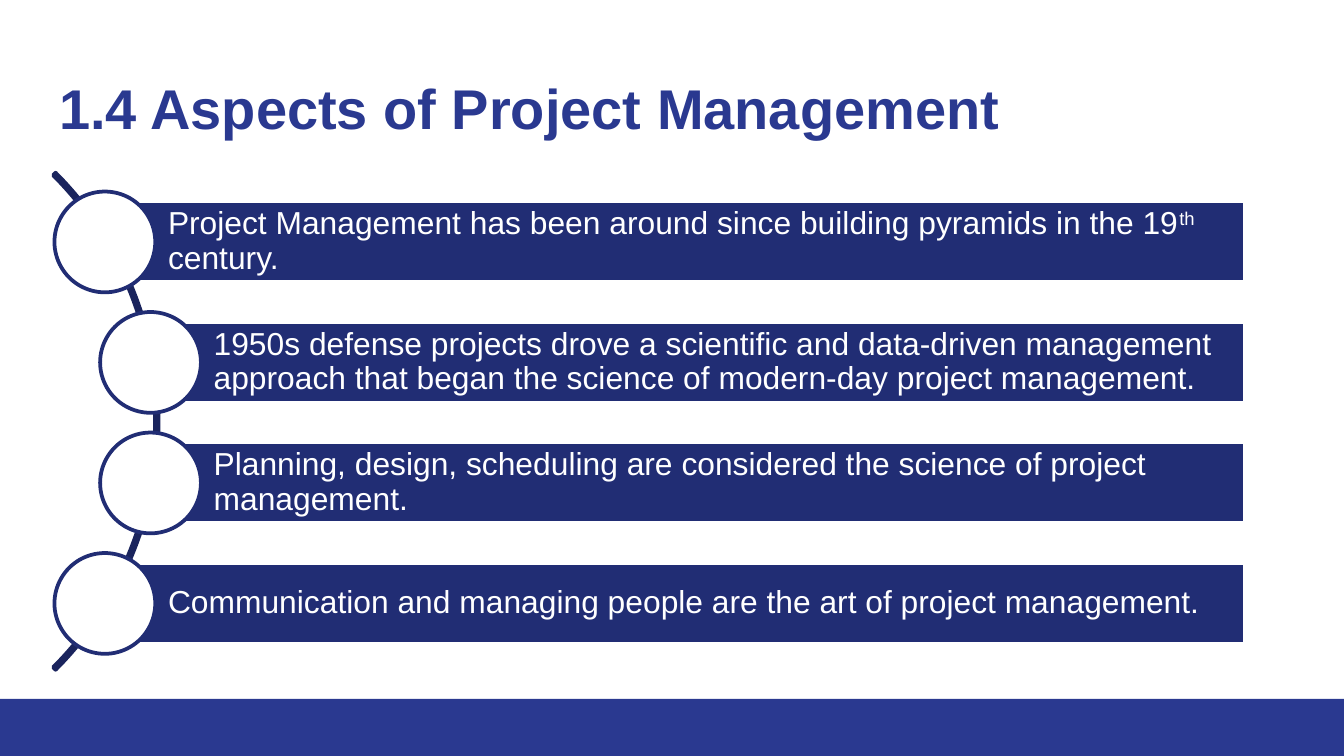
"""Build a slide on the aspects of project management."""
from pptx import Presentation
from pptx.dml.color import RGBColor
from pptx.enum.shapes import MSO_SHAPE
from pptx.enum.text import MSO_ANCHOR, MSO_AUTO_SIZE, PP_ALIGN
from pptx.util import Inches, Pt

RECT, OVAL, ARC = MSO_SHAPE.RECTANGLE, MSO_SHAPE.OVAL, MSO_SHAPE.BLOCK_ARC
TOP, MIDDLE = MSO_ANCHOR.TOP, MSO_ANCHOR.MIDDLE
LEFT = PP_ALIGN.LEFT
FIXED = MSO_AUTO_SIZE.NONE

COLORS = {"blue": "2A3990", "navy": "212D74", "dark": "1A245D", "white": "FFFFFF"}
FONT = "Arial"
WIDTH = 10
HEIGHT = WIDTH * 9 / 16
EDGE = 9.26
BAR = 0.6
DOT = 0.75
FIRST = 1.5
LAST = 4.19
ITEMS = [
    (0.78, ["Project Management has been around since building pyramids in the 19",
            "^th", " century."]),
    (1.12, ["1950s defense projects drove a scientific and data-driven management "
            "approach that began the science of modern-day project management."]),
    (1.12, ["Planning, design, scheduling are considered the science of project "
            "management."]),
    (0.78, ["Communication and managing people are the art of project management."]),
]
STEP = (LAST - FIRST) / (len(ITEMS) - 1)


def color(name):
    """Return the named colour."""
    return RGBColor.from_string(COLORS[name])


def write(frame, parts, size=17, ink="white", bold=False, anchor=MIDDLE,
          pads=(0.47, 0.05, 0.05, 0.05), space=0.9):
    """Fill a text frame with runs; a leading ^ marks a superscript."""
    frame.word_wrap = True
    frame.auto_size = FIXED
    frame.vertical_anchor = anchor
    (frame.margin_left, frame.margin_top,
     frame.margin_right, frame.margin_bottom) = map(Inches, pads)
    para = frame.paragraphs[0]
    para.alignment = LEFT
    para.line_spacing = space
    for part in parts:
        run = para.add_run()
        run.text = part.removeprefix("^")
        run.font.name = FONT
        run.font.size = Pt(size)
        run.font.bold = bold
        run.font.color.rgb = color(ink)
        if part.startswith("^"):
            run._r.get_or_add_rPr().set("baseline", "30000")


class Deck:
    """Hold the style and the current slide."""

    def __init__(self):
        """Start a deck with one title-only slide."""
        self.file = Presentation()
        self.file.slide_width = Inches(WIDTH)
        self.file.slide_height = Inches(HEIGHT)
        self.slide = self.file.slides.add_slide(self.file.slide_layouts[5])

    def title(self, text, box):
        """Place the title."""
        shape = self.slide.shapes.title
        shape.left, shape.top, shape.width, shape.height = map(Inches, box)
        write(shape.text_frame, [text], size=30, ink="blue", bold=True,
              anchor=TOP, pads=(0.1,) * 4, space=1)

    def shape(self, kind, box, fill=None, line=None):
        """Add a preset shape and return it."""
        shape = self.slide.shapes.add_shape(kind, *map(Inches, box))
        shape.shadow.inherit = False
        if fill:
            shape.fill.solid()
            shape.fill.fore_color.rgb = color(fill)
        else:
            shape.fill.background()
        if line:
            shape.line.color.rgb = color(line)
            shape.line.width = Pt(2)
        else:
            shape.line.fill.background()
        return shape

    def curve(self, box):
        """Add the thin arc that links the dots."""
        arc = self.shape(ARC, box, line="dark")
        for i, value in enumerate((189, 27, 0.005)):
            arc.adjustments[i] = value

    def item(self, left, top, parts):
        """Add a text bar with a dot centred on its left end."""
        bar = self.shape(RECT, (left, top, EDGE - left, BAR), "navy", "white")
        write(bar.text_frame, parts)
        self.shape(OVAL, (left - DOT / 2, top + (BAR - DOT) / 2, DOT, DOT),
                   "white", "navy")


def main():
    """Build and save the slide."""
    deck = Deck()
    deck.shape(RECT, (0, 5.2, WIDTH, HEIGHT - 5.2), "blue")
    deck.title("1.4 Aspects of Project Management", (0.34, 0.45, 9.32, 0.66))
    deck.curve((-4.05, 0.52, 5.23, 5.23))
    for i, (left, parts) in enumerate(ITEMS):
        deck.item(left, FIRST + i * STEP, parts)
    deck.file.save("out.pptx")


if __name__ == "__main__":
    main()
